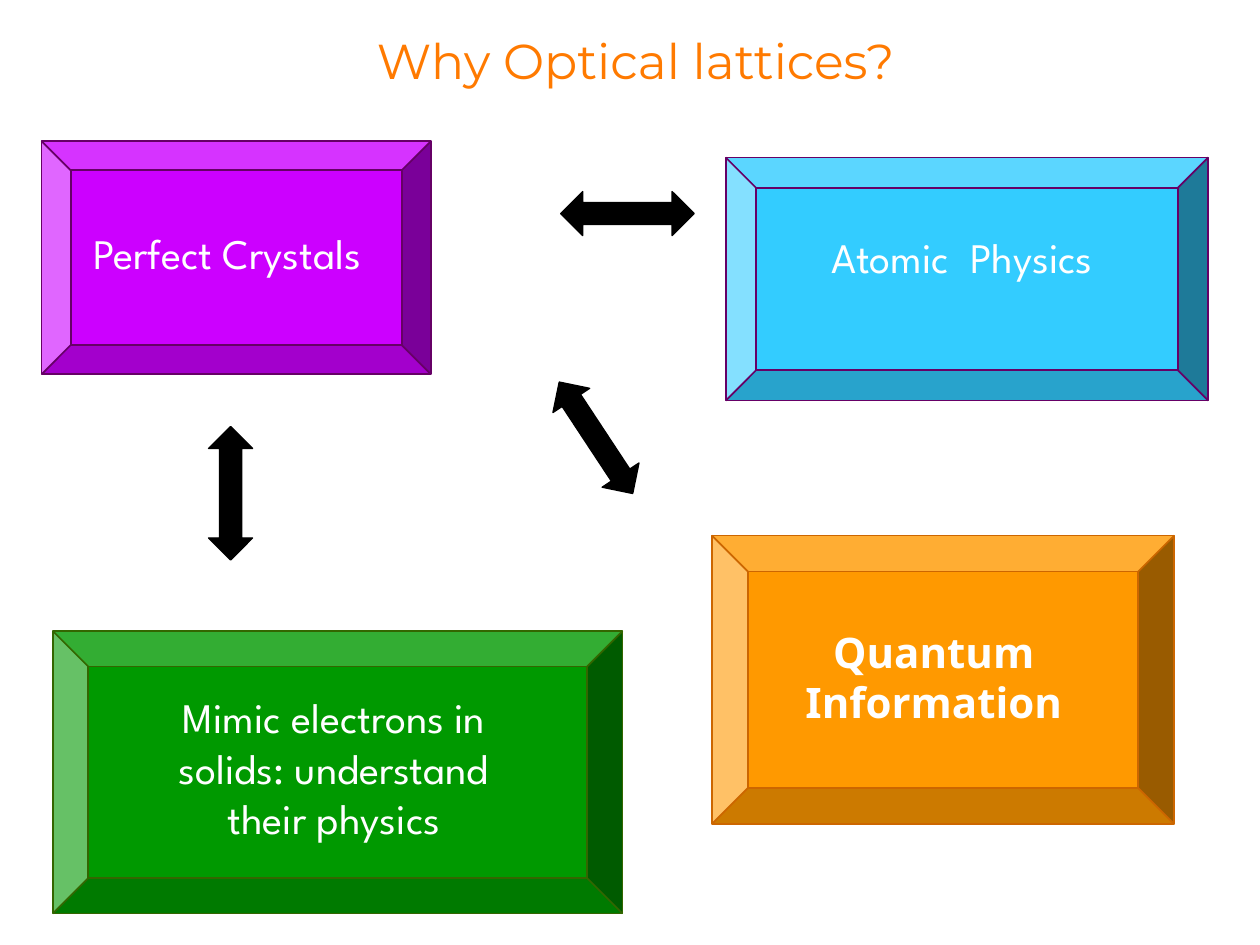
from dataclasses import dataclass

from pptx import Presentation
from pptx import util as u
from pptx.dml.color import RGBColor
from pptx.enum import shapes, text

EMU_PER_PX = 9144


@dataclass(frozen=True)
class Theme:
    title: str = "FF7A00"
    caption: str = "FFFFFF"
    arrow: str = "000000"
    purple: str = "CC00FF"
    plum: str = "660066"
    green: str = "009900"
    moss: str = "336600"
    orange: str = "FF9900"
    rust: str = "CC6600"
    sky: str = "33CCFF"
    title_font: str = "Montserrat"
    body_font: str = "League Spartan"
    strong_font: str = "Noto Sans"
    title_size: int = 28
    body_size: int = 24
    panel_line: float = 1
    arrow_line: float = 0.75


THEME = Theme()


@dataclass(frozen=True)
class Box:
    x: int
    y: int
    w: int
    h: int

    def emu(self) -> list[int]:
        return [v * EMU_PER_PX for v in (self.x, self.y, self.w, self.h)]


@dataclass(frozen=True)
class Panel:
    frame: Box
    label: Box
    caption: str
    fill: str
    line: str
    font: str = THEME.body_font
    bold: bool = False


@dataclass(frozen=True)
class Arrow:
    box: Box
    rotation: float = 0


PANELS = [
    Panel(Box(33, 112, 309, 185), Box(33, 176, 303, 61),
          "Perfect Crystals ", THEME.purple, THEME.plum),
    Panel(Box(42, 501, 452, 224), Box(100, 544, 330, 131),
          "Mimic electrons in solids: understand their physics",
          THEME.green, THEME.moss),
    Panel(Box(565, 425, 367, 229), Box(587, 492, 308, 91),
          "Quantum Information", THEME.orange, THEME.rust,
          THEME.strong_font, True),
    Panel(Box(576, 125, 383, 193), Box(576, 179, 375, 50),
          "Atomic  Physics", THEME.sky, THEME.plum),
]

ARROWS = [
    Arrow(Box(445, 152, 106, 35)),
    Arrow(Box(130, 374, 106, 35), 90),
    Arrow(Box(420, 330, 106, 35), 56.6),
]


def add_text(parent, box: Box, words: str, font: str, size: int,
             color: str, bold: bool = False, wrap: bool = True) -> None:
    tf = parent.add_textbox(*box.emu()).text_frame
    tf.word_wrap = wrap
    if wrap:
        tf.auto_size = text.MSO_AUTO_SIZE.SHAPE_TO_FIT_TEXT
    p = tf.paragraphs[0]
    p.alignment = text.PP_ALIGN.CENTER
    r = p.add_run()
    r.text = words
    r.font.name = font
    r.font.size = u.Pt(size)
    r.font.bold = bold
    r.font.color.rgb = RGBColor.from_string(color)


def add_preset(parent, kind: shapes.MSO_SHAPE, box: Box, fill: str,
               line: str, width: float):
    sp = parent.add_shape(kind, *box.emu())
    sp.shadow.inherit = False
    sp.fill.solid()
    sp.fill.fore_color.rgb = RGBColor.from_string(fill)
    sp.line.color.rgb = RGBColor.from_string(line)
    sp.line.width = u.Pt(width)
    return sp


def add_panel(s, panel: Panel) -> None:
    group = s.shapes.add_group_shape().shapes
    sp = add_preset(group, shapes.MSO_SHAPE.BEVEL, panel.frame,
                    panel.fill, panel.line, THEME.panel_line)
    sp.adjustments[0] = 0.125
    add_text(group, panel.label, panel.caption, panel.font,
             THEME.body_size, THEME.caption, panel.bold)


def add_arrow(s, arrow: Arrow) -> None:
    sp = add_preset(s.shapes, shapes.MSO_SHAPE.LEFT_RIGHT_ARROW, arrow.box,
                    THEME.arrow, THEME.arrow, THEME.arrow_line)
    sp.rotation = arrow.rotation


def main() -> None:
    prs = Presentation()
    prs.slide_width = 1000 * EMU_PER_PX
    prs.slide_height = 750 * EMU_PER_PX
    s = prs.slides.add_slide(prs.slide_layouts[6])
    add_text(s.shapes, Box(258, 19, 493, 85), "Why Optical lattices?",
             THEME.title_font, THEME.title_size, THEME.title, wrap=False)
    for panel in PANELS:
        add_panel(s, panel)
    for arrow in ARROWS:
        add_arrow(s, arrow)
    prs.save("out.pptx")


if __name__ == "__main__":
    main()
